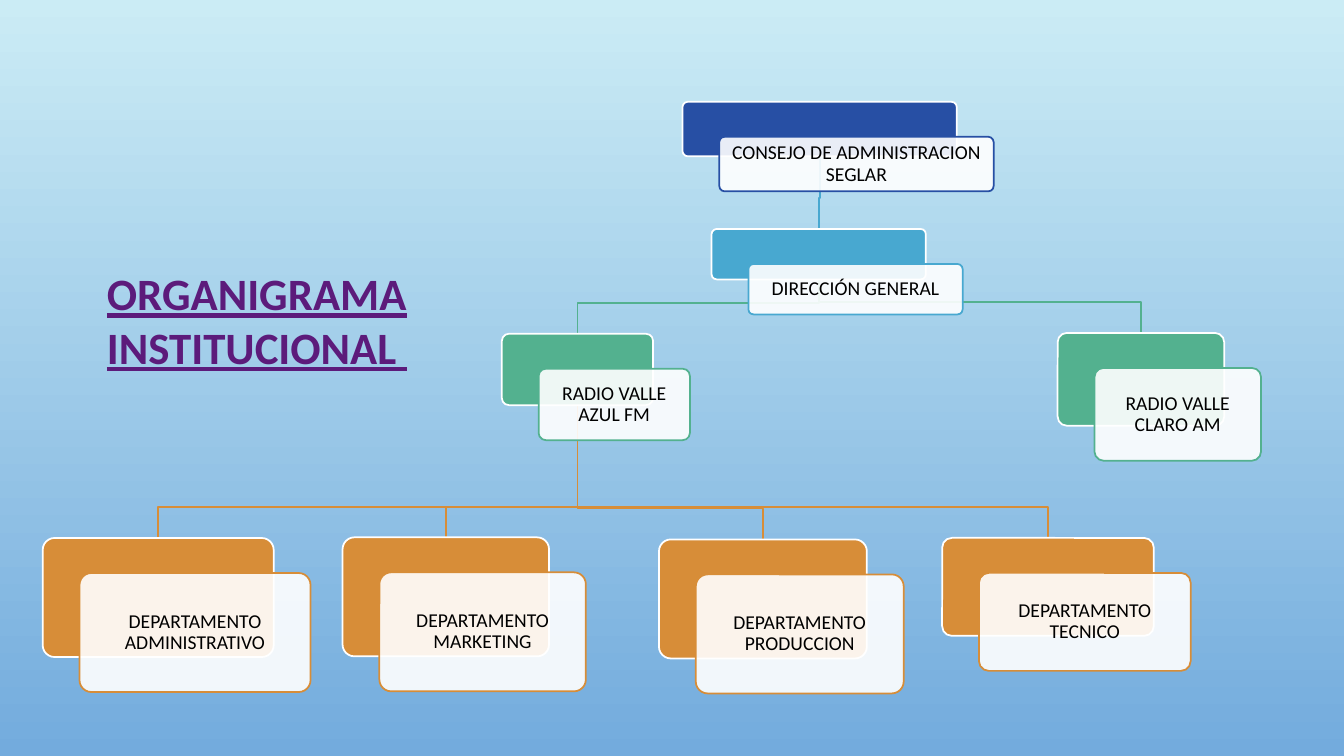
"""Build the organisation chart slide with its title."""
from collections import namedtuple
from lxml.etree import SubElement
from pptx import Presentation
from pptx.dml.color import RGBColor
from pptx.enum.shapes import MSO_SHAPE as Shape
from pptx.enum.text import MSO_ANCHOR as Anchor, MSO_AUTO_SIZE as AutoSize, PP_ALIGN as Align
from pptx.oxml.ns import qn
from pptx.util import Pt

TITLE = "ORGANIGRAMA INSTITUCIONAL "
TITLE_BOX = (57, 186.5, 253, 85)

Unit = namedtuple("Unit", "name boss level left top width height")
UNITS = [
    Unit("CONSEJO DE ADMINISTRACION SEGLAR", None, 0, 487.5, 72.7, 196, 39),
    Unit("DIRECCIÓN GENERAL", 0, 1, 508.3, 163.6, 153, 36),
    Unit("RADIO VALLE CLARO AM", 1, 2, 755.5, 237.8, 119, 66.3),
    Unit("RADIO VALLE AZUL FM", 1, 2, 358.5, 238.4, 108, 51),
    Unit("DEPARTAMENTO ADMINISTRATIVO", 3, 3, 30.5, 384.3, 165, 85),
    Unit("DEPARTAMENTO MARKETING", 3, 3, 244.7, 383.8, 147.5, 85),
    Unit("DEPARTAMENTO PRODUCCION", 3, 3, 470.7, 385.3, 148.5, 85),
    Unit("DEPARTAMENTO TECNICO", 3, 3, 673, 384.2, 151.2, 70),
]

THEME = {
    "font": "Calibri",
    "title_size": 32,
    "unit_size": 14,
    "line": 1.25,
    "title": "5C1B7B",
    "text": "000000",
    "card": "FFFFFF",
    "levels": ["274FA4", "48A8D0", "53B18F", "D78D38"],
    "sky": ["CBECF5", "73ABDD"],
}
CARD_SHIFT = (26.3, 25)
CARD_OPACITY = 90
CARD_INSET = 6
CORNER = 0.1
BEND_RISE = 22


def rgb(colour):
    """Turn a hex code into a colour."""
    return RGBColor.from_string(colour)


def style_text(frame, text, size, colour, bold=None, underline=None):
    """Write centred text in the theme font."""
    frame.word_wrap = True
    frame.auto_size = AutoSize.NONE
    frame.text = text
    paragraph = frame.paragraphs[0]
    paragraph.alignment = Align.CENTER
    font = paragraph.runs[0].font
    font.name, font.size = THEME["font"], Pt(size)
    font.bold, font.underline = bold, underline
    font.color.rgb = rgb(colour)
    return paragraph


def style_line(item, colour):
    """Give an item a flat outline."""
    item.shadow.inherit = False
    item.line.color.rgb = rgb(colour)
    item.line.width = Pt(THEME["line"])


def add_link(slide, boss, unit):
    """Draw the bent line from a unit up to its boss."""
    start_x, end_x = (u.left + u.width / 2 for u in (boss, unit))
    bend = unit.top - BEND_RISE
    builder = slide.shapes.build_freeform(Pt(start_x), Pt(boss.top + boss.height))
    corners = [(start_x, bend), (end_x, bend), (end_x, unit.top)]
    builder.add_line_segments([(Pt(x), Pt(y)) for x, y in corners], close=False)
    link = builder.convert_to_shape()
    link.fill.background()
    style_line(link, THEME["levels"][unit.level])


def add_card(slide, unit, shift, fill, outline):
    """Draw one rounded card of a unit."""
    box = (unit.left + shift[0], unit.top + shift[1], unit.width, unit.height)
    card = slide.shapes.add_shape(Shape.ROUNDED_RECTANGLE, *map(Pt, box))
    card.adjustments[0] = CORNER
    card.fill.solid()
    card.fill.fore_color.rgb = rgb(fill)
    style_line(card, outline)
    return card


def add_unit(slide, unit):
    """Draw a coloured card and the translucent name card over it."""
    colour = THEME["levels"][unit.level]
    add_card(slide, unit, (0, 0), colour, THEME["card"])
    name_card = add_card(slide, unit, CARD_SHIFT, THEME["card"], colour)
    tint = name_card.fill._xPr.find(qn("a:solidFill"))[0]
    SubElement(tint, qn("a:alpha")).set("val", str(CARD_OPACITY * 1000))
    frame = name_card.text_frame
    frame.vertical_anchor = Anchor.MIDDLE
    frame.margin_left = frame.margin_right = Pt(CARD_INSET)
    frame.margin_top = frame.margin_bottom = Pt(CARD_INSET)
    paragraph = style_text(frame, unit.name, THEME["unit_size"], THEME["text"])
    paragraph.line_spacing = 0.9


def main():
    """Build and save the slide."""
    deck = Presentation()
    deck.slide_width, deck.slide_height = Pt(960), Pt(540)
    slide = deck.slides.add_slide(deck.slide_layouts[5])

    sky = slide.background.fill
    sky.gradient()
    sky.gradient_angle = 270
    for stop, colour in zip(sky.gradient_stops, THEME["sky"]):
        stop.color.rgb = rgb(colour)

    heading = slide.shapes.title
    heading.left, heading.top, heading.width, heading.height = map(Pt, TITLE_BOX)
    heading.text_frame.vertical_anchor = Anchor.TOP
    style_text(heading.text_frame, TITLE, THEME["title_size"], THEME["title"], True, True)

    for unit in reversed(UNITS):
        if unit.boss is not None:
            add_link(slide, UNITS[unit.boss], unit)
    for unit in UNITS:
        add_unit(slide, unit)
    deck.save("out.pptx")


if __name__ == "__main__":
    main()
